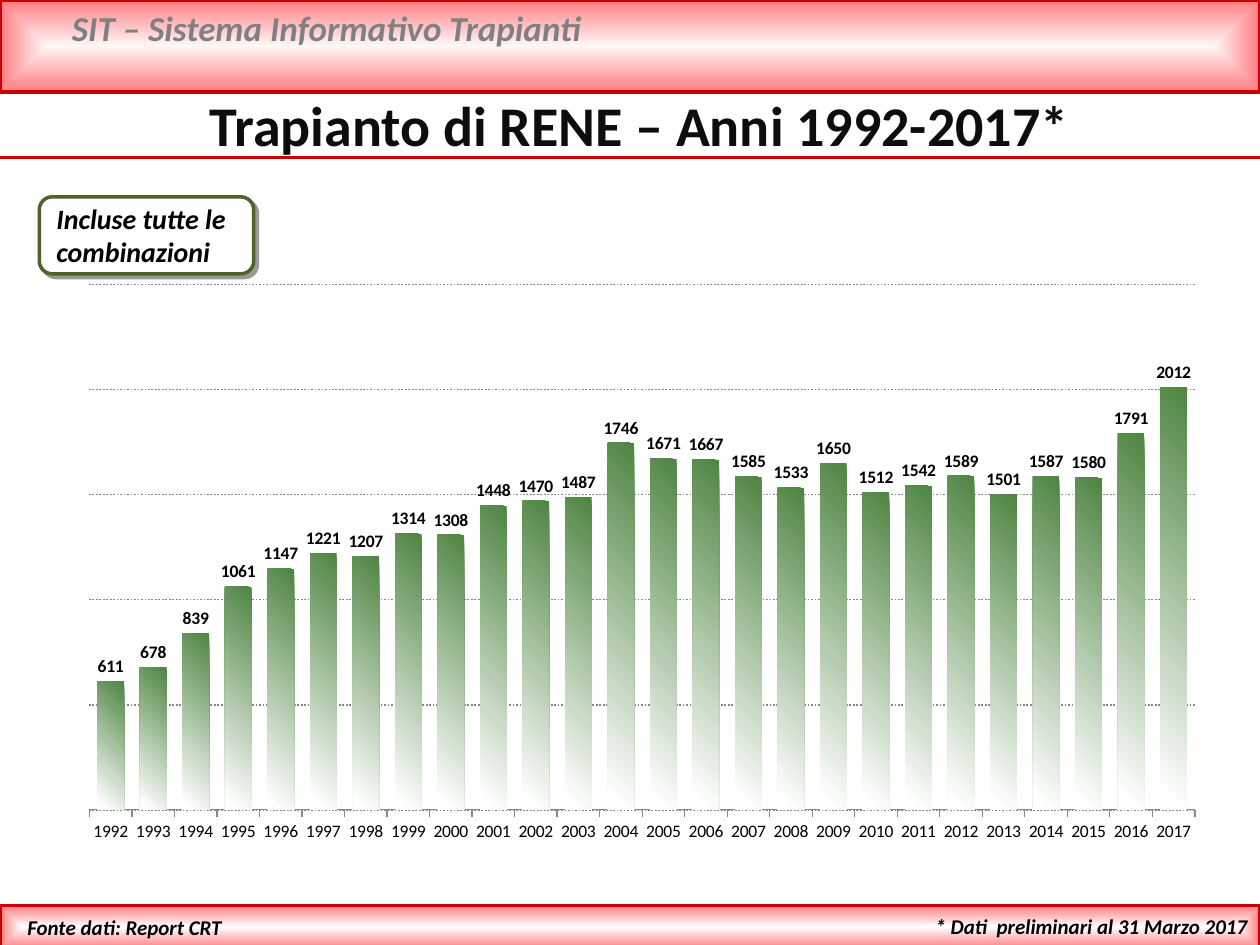
"""Build the kidney transplant slide with its yearly column chart."""

from dataclasses import dataclass
from typing import Any

from pptx import Presentation
from pptx.chart.data import CategoryChartData
from pptx.dml.color import RGBColor
from pptx.enum.chart import XL_CHART_TYPE, XL_LABEL_POSITION, XL_TICK_LABEL_POSITION, XL_TICK_MARK
from pptx.enum.dml import MSO_LINE
from pptx.enum.shapes import MSO_CONNECTOR, MSO_SHAPE
from pptx.enum.text import MSO_ANCHOR, PP_ALIGN
from pptx.oxml import parse_xml
from pptx.oxml.ns import nsdecls, qn
from pptx.util import Pt

COLORS = {
    "red": "CC0000",
    "rose": "FF7C80",
    "blush": "FFF6F6",
    "white": "FFFFFF",
    "grey": "808080",
    "grid": "888888",
    "ink": "0D0D0D",
    "black": "000000",
    "olive": "4F6228",
    "green": "4E8542",
}
FONT = "Calibri"
FIRST_YEAR = 1992
TRANSPLANTS = [
    611, 678, 839, 1061, 1147, 1221, 1207, 1314, 1308, 1448, 1470, 1487, 1746,
    1671, 1667, 1585, 1533, 1650, 1512, 1542, 1589, 1501, 1587, 1580, 1791, 2012,
]
RADIAL = '<a:path path="shape"><a:fillToRect l="50000" t="50000" r="50000" b="50000"/></a:path>'
DIAGONAL = '<a:lin ang="8100000" scaled="0"/>'


@dataclass(frozen=True)
class Box:
    """Position and size in points."""

    left: float
    top: float
    width: float
    height: float

    def lengths(self) -> tuple:
        """Return the four lengths as slide units."""
        return Pt(self.left), Pt(self.top), Pt(self.width), Pt(self.height)


@dataclass(frozen=True)
class Band:
    """Red-edged band with a light centre."""

    box: Box
    centre: str


@dataclass(frozen=True)
class Label:
    """Bold italic text in a box."""

    text: str
    box: Box
    size: float
    color: str = "black"
    alignment: Any = PP_ALIGN.LEFT


BANDS = [
    Band(Box(0, 0, 720, 52.5), "blush"),
    Band(Box(0, 517.5, 720, 24.5), "white"),
]
LABELS = [
    Label("SIT – Sistema Informativo Trapianti", Box(34, 0, 646.5, 31.5), 20, "grey"),
    Label("* Dati  preliminari al 31 Marzo 2017", Box(422.5, 518.5, 297.5, 21.5), 12,
          alignment=PP_ALIGN.RIGHT),
    Label("Fonte dati: Report CRT", Box(8.5, 519, 231, 21.5), 12),
    Label("Incluse tutte le combinazioni", Box(25.2, 111.5, 119, 46), 16),
]


def rgb(name: str) -> RGBColor:
    """Look up a named colour."""
    return RGBColor.from_string(COLORS[name])


def apply(target: Any, values: dict) -> None:
    """Set each attribute in values on the target."""
    for name, value in values.items():
        setattr(target, name, value)


def style_font(font: Any, color: str, **values: Any) -> None:
    """Set typeface, colour and further font attributes."""
    apply(font, {"name": FONT, **values})
    font.color.rgb = rgb(color)


def style_line(line: Any, color: str, width: float) -> None:
    """Set the colour and width of a line."""
    line.color.rgb = rgb(color)
    line.width = Pt(width)


def fill_gradient(fill: Any, properties: Any, stops: list, direction: str) -> None:
    """Fill with a gradient that has the given stops and direction."""
    fill.gradient()
    stop_xml = "".join(
        f'<a:gs pos="{position * 1000}"><a:srgbClr val="{COLORS[color]}"/></a:gs>'
        for position, color in stops
    )
    gradient = parse_xml(
        f'<a:gradFill {nsdecls("a")} rotWithShape="1"><a:gsLst>{stop_xml}</a:gsLst>{direction}</a:gradFill>'
    )
    properties.replace(properties.find(qn("a:gradFill")), gradient)


def add_band(slide: Any, band: Band) -> None:
    """Draw a gradient band."""
    shape = slide.shapes.add_shape(MSO_SHAPE.RECTANGLE, *band.box.lengths())
    shape.shadow.inherit = False
    stops = [(0, band.centre), (100, "rose")]
    fill_gradient(shape.fill, shape._element.spPr, stops, RADIAL)
    style_line(shape.line, "red", 2)


def add_rule(slide: Any, top: float) -> None:
    """Draw a red line across the slide."""
    rule = slide.shapes.add_connector(MSO_CONNECTOR.STRAIGHT, 0, Pt(top), Pt(720), Pt(top))
    style_line(rule.line, "red", 2)
    rule._element.spPr.append(parse_xml(f'<a:effectLst {nsdecls("a")}/>'))


def add_callout(slide: Any, box: Box) -> None:
    """Draw the rounded frame with its offset shadow."""
    shape = slide.shapes.add_shape(MSO_SHAPE.ROUNDED_RECTANGLE, *box.lengths())
    shape.fill.solid()
    shape.fill.fore_color.rgb = rgb("white")
    style_line(shape.line, "olive", 2)
    shape._element.spPr.append(parse_xml(
        f'<a:effectLst {nsdecls("a")}><a:outerShdw blurRad="0" dist="38100" dir="2700000" '
        f'algn="tl" rotWithShape="0"><a:srgbClr val="{COLORS["black"]}">'
        '<a:alpha val="40000"/></a:srgbClr></a:outerShdw></a:effectLst>'
    ))


def add_label(slide: Any, label: Label) -> None:
    """Write a label in a text box."""
    frame = slide.shapes.add_textbox(*label.box.lengths()).text_frame
    frame.word_wrap = True
    paragraph = frame.paragraphs[0]
    paragraph.alignment = label.alignment
    run = paragraph.add_run()
    run.text = label.text
    style_font(run.font, label.color, size=Pt(label.size), bold=True, italic=True)


def fill_title(slide: Any, text: str, box: Box) -> None:
    """Place and format the title placeholder."""
    title = slide.shapes.title
    apply(title, dict(zip(("left", "top", "width", "height"), box.lengths())))
    frame = title.text_frame
    apply(frame, {"text": text, "word_wrap": True, "vertical_anchor": MSO_ANCHOR.TOP})
    paragraph = frame.paragraphs[0]
    paragraph.alignment = PP_ALIGN.CENTER
    style_font(paragraph.runs[0].font, "ink", size=Pt(32), bold=True)


def add_transplant_chart(slide: Any, box: Box) -> None:
    """Draw transplants per year as columns."""
    data = CategoryChartData()
    data.categories = [str(FIRST_YEAR + offset) for offset in range(len(TRANSPLANTS))]
    data.add_series("Series 1", TRANSPLANTS)
    chart = slide.shapes.add_chart(XL_CHART_TYPE.COLUMN_CLUSTERED, *box.lengths(), data).chart
    apply(chart, {"has_legend": False, "has_title": False})
    style_font(chart.font, "black", size=Pt(10))

    plot = chart.plots[0]
    apply(plot, {"gap_width": 60, "overlap": -20, "vary_by_categories": False, "has_data_labels": True})
    apply(plot.data_labels, {"show_value": True, "position": XL_LABEL_POSITION.OUTSIDE_END})
    style_font(plot.data_labels.font, "black", size=Pt(10), bold=True)

    series = plot.series[0]
    fill = series.format.fill
    fill_gradient(fill, series._element.find(qn("c:spPr")), [(0, "green"), (96, "white")], DIAGONAL)

    apply(chart.value_axis, {
        "minimum_scale": 0, "maximum_scale": 2500, "major_unit": 500,
        "has_major_gridlines": True, "visible": False,
    })
    grid = chart.value_axis.major_gridlines.format.line
    style_line(grid, "grid", 1)
    grid.dash_style = MSO_LINE.ROUND_DOT
    apply(chart.category_axis, {
        "major_tick_mark": XL_TICK_MARK.OUTSIDE,
        "tick_label_position": XL_TICK_LABEL_POSITION.LOW,
    })
    style_line(chart.category_axis.format.line, "grid", 0.75)

    area = chart._chartSpace.chart.plotArea
    for layout in area.findall(qn("c:layout")):
        area.remove(layout)
    sizes = "".join(f'<c:{key} val="{value}"/>' for key, value in
                    {"x": 0.02, "y": 0.02, "w": 0.96, "h": 0.9}.items())
    area.insert(0, parse_xml(
        f'<c:layout {nsdecls("c")}><c:manualLayout><c:layoutTarget val="inner"/>'
        f'<c:xMode val="edge"/><c:yMode val="edge"/>{sizes}</c:manualLayout></c:layout>'
    ))


def main() -> None:
    """Build and save the presentation."""
    presentation = Presentation()
    apply(presentation, {"slide_width": Pt(720), "slide_height": Pt(540)})
    slide = presentation.slides.add_slide(presentation.slide_layouts[5])
    for band in BANDS:
        add_band(slide, band)
    add_rule(slide, 90)
    fill_title(slide, "Trapianto di RENE – Anni 1992-2017*", Box(78.5, 48, 574, 46))
    add_callout(slide, Box(22.5, 112.5, 122.5, 44))
    for label in LABELS:
        add_label(slide, label)
    add_transplant_chart(slide, Box(38, 156, 658, 333.5))
    presentation.save("out.pptx")


if __name__ == "__main__":
    main()
